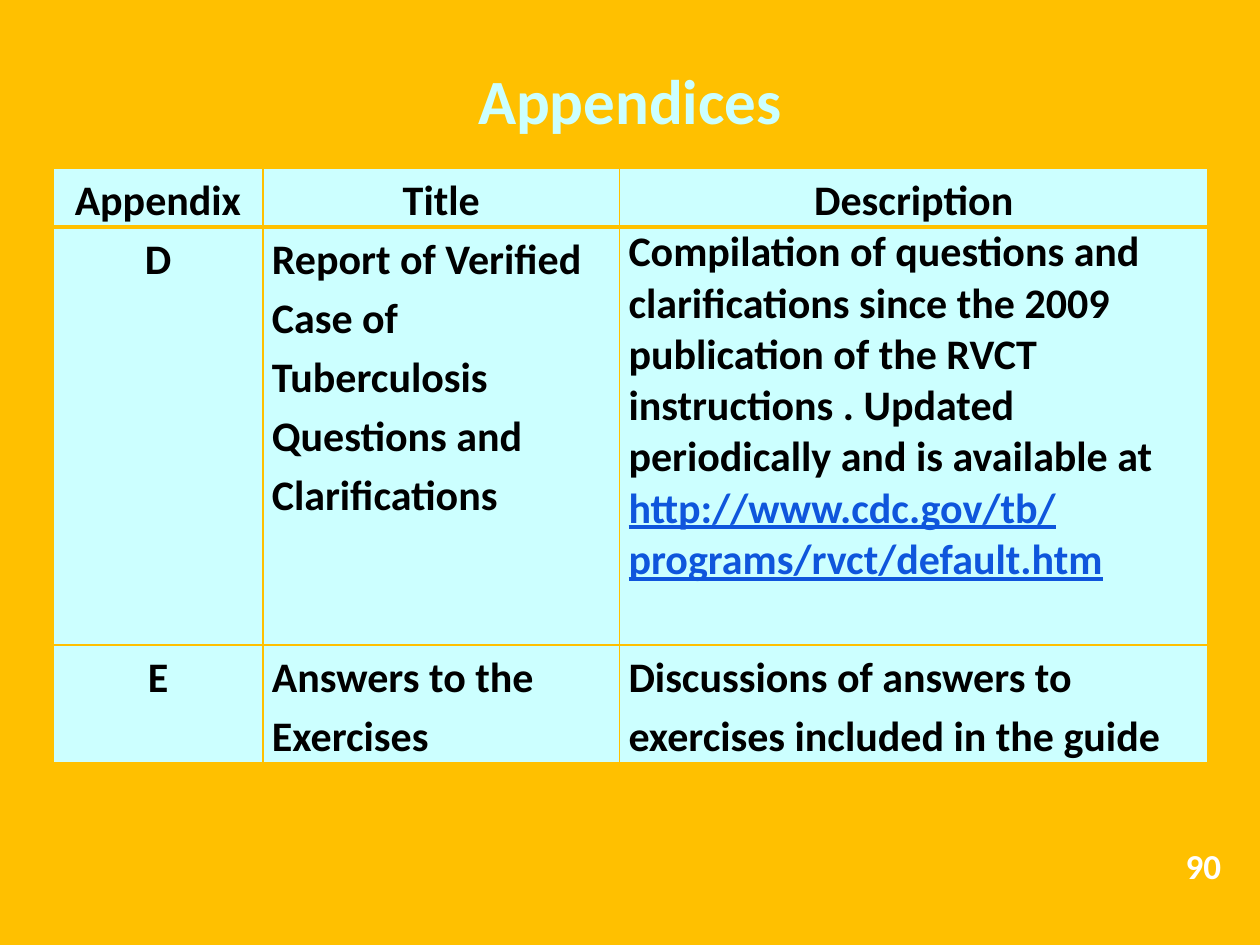
from lxml import etree
from pptx import Presentation
from pptx import util as u
from pptx.dml.color import RGBColor
from pptx.enum import text
from pptx.oxml.ns import qn

COLORS = {"gold": "FFC000", "ice": "CCFFFF", "black": "000000",
          "link": "0F56DC", "white": "FFFFFF"}
CENTER, LEFT, RIGHT = text.PP_ALIGN.CENTER, text.PP_ALIGN.LEFT, text.PP_ALIGN.RIGHT


def write(p, content, size=24, color="black", align=LEFT, spacing=None, underline=False):
    p.alignment = align
    p.line_spacing = spacing
    r = p.add_run()
    r.text = content
    r.font.name, r.font.size, r.font.bold = "Calibri", u.Pt(size), True
    r.font.underline = underline
    r.font.color.rgb = RGBColor.from_string(COLORS[color])


def add_borders(cell, **widths):
    """Draw gold borders; widths maps L, R, T, B to points."""
    for side, width in widths.items():
        ln = etree.SubElement(cell._tc.get_or_add_tcPr(), qn(f"a:ln{side}"), w=str(u.Pt(width)))
        fill = etree.SubElement(ln, qn("a:solidFill"))
        etree.SubElement(fill, qn("a:srgbClr"), val=COLORS["gold"])


prs = Presentation()
prs.slide_width, prs.slide_height = u.Cm(25.4), u.Cm(19.05)
s = prs.slides.add_slide(prs.slide_layouts[5])
s.background.fill.solid()
s.background.fill.fore_color.rgb = RGBColor.from_string(COLORS["gold"])

# Title
title = s.shapes.title
title.left, title.top, title.width, title.height = u.Cm(1.27), u.Cm(1.07), u.Cm(22.86), u.Cm(1.83)
tf = title.text_frame
tf.auto_size = text.MSO_AUTO_SIZE.NONE
tf.vertical_anchor = text.MSO_ANCHOR.BOTTOM
write(tf.paragraphs[0], "Appendices", size=36, color="ice", align=CENTER, spacing=u.Pt(36))

# Appendix table: each cell is a list of paragraphs
rows = [
    [["Appendix"], ["Title"], ["Description"]],
    [["D"],
     ["Report of Verified Case of Tuberculosis Questions and Clarifications"],
     ["Compilation of questions and clarifications since the 2009 publication of the RVCT "
      "instructions . Updated periodically and is available at",
      "http://www.cdc.gov/tb/", "programs/rvct/default.htm"]],
    [["E"], ["Answers to the Exercises"],
     ["Discussions of answers to exercises included in the guide"]],
]
col_widths = [4.23, 7.19, 11.86]
row_heights = [1.18, 8.42, 2.37]

table = s.shapes.add_table(len(rows), len(col_widths), u.Cm(1.07), u.Cm(3.39),
                           u.Cm(sum(col_widths)), u.Cm(sum(row_heights))).table
table.horz_banding = False
for column, width in zip(table.columns, col_widths):
    column.width = u.Cm(width)
for row, height in zip(table.rows, row_heights):
    row.height = u.Cm(height)

for i, row in enumerate(rows):
    for j, paragraphs in enumerate(row):
        cell = table.cell(i, j)
        add_borders(cell, L=1, R=1, T=3 if i == 1 else 1, B=3 if i == 0 else 1)
        cell.fill.solid()
        cell.fill.fore_color.rgb = RGBColor.from_string(COLORS["ice"])
        cell.margin_left = cell.margin_right = u.Cm(0.18)
        cell.margin_top = cell.margin_bottom = 0
        tf = cell.text_frame
        for k, content in enumerate(paragraphs):
            p = tf.add_paragraph() if k else tf.paragraphs[0]
            write(p, content, color="link" if k else "black", underline=k > 0,
                  align=CENTER if i == 0 or j == 0 else LEFT,
                  spacing=1.15 if len(paragraphs) == 1 else 1.0)

# Page number
number = s.shapes.add_textbox(u.Cm(22.76), u.Cm(16.89), u.Cm(2.11), u.Cm(1.12))
number.text_frame.word_wrap = True
write(number.text_frame.paragraphs[0], "90", size=20, color="white", align=RIGHT)

prs.save("out.pptx")
